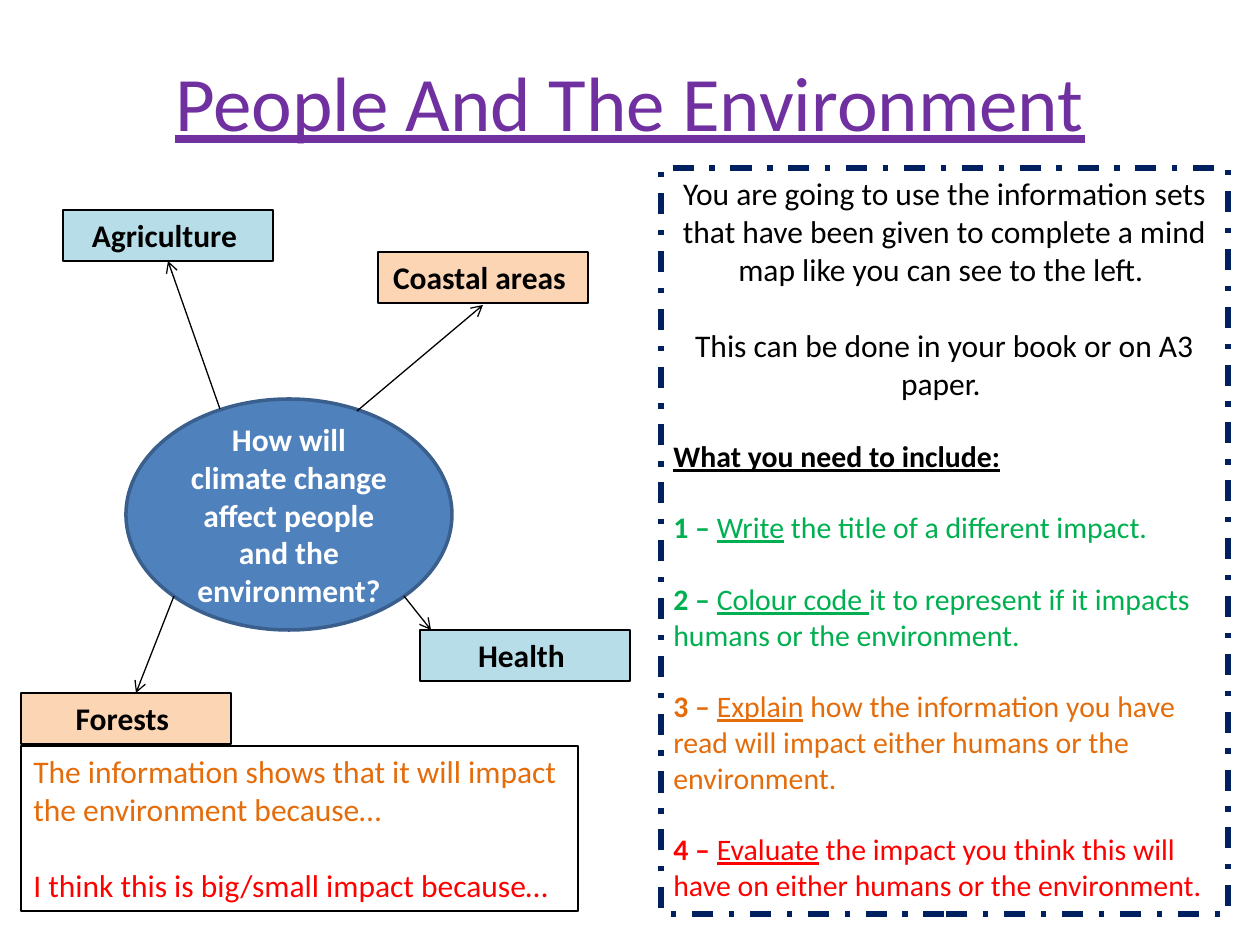
from lxml.etree import SubElement
from pptx import Presentation
from pptx.dml.color import RGBColor
from pptx.enum.dml import MSO_LINE
from pptx.enum.shapes import MSO_CONNECTOR, MSO_SHAPE
from pptx.enum.text import MSO_ANCHOR, PP_ALIGN
from pptx.oxml.ns import qn
from pptx.util import Pt

PX = 914400 // 126
FONT = "Calibri"
BLACK = RGBColor(0x00, 0x00, 0x00)
WHITE = RGBColor(0xFF, 0xFF, 0xFF)
PURPLE = RGBColor(0x70, 0x30, 0xA0)
NAVY = RGBColor(0x00, 0x20, 0x60)
BLUE = RGBColor(0x4F, 0x81, 0xBD)
DARK_BLUE = RGBColor(0x3A, 0x5F, 0x8C)
PEACH = RGBColor(0xFC, 0xD5, 0xB5)
AQUA = RGBColor(0xB7, 0xDE, 0xE8)
GREEN = RGBColor(0x00, 0xB0, 0x50)
ORANGE = RGBColor(0xE4, 0x6C, 0x0A)
RED = RGBColor(0xFF, 0x00, 0x00)


def add_box(x, y, w, h, color=BLACK, width=0.75):
    """Add an outlined, wrapping text box and return it."""
    sp = s.shapes.add_textbox(x * PX, y * PX, w * PX, h * PX)
    sp.line.color.rgb = color
    sp.line.width = Pt(width)
    sp.text_frame.word_wrap = True
    return sp


def write(tf, text, size=18, color=BLACK, align=PP_ALIGN.LEFT, before=0):
    """Fill the empty first paragraph, or append one, and return it."""
    p = tf.paragraphs[0]
    if p.runs:
        p = tf.add_paragraph()
    p.add_run().text = text
    p.alignment = align
    p.space_before = Pt(before)
    p.font.name = FONT
    p.font.size = Pt(size)
    p.font.color.rgb = color
    return p


prs = Presentation()
prs.slide_width = 1260 * PX
prs.slide_height = 945 * PX
s = prs.slides.add_slide(prs.slide_layouts[5])

title = s.shapes.title
title.left, title.top, title.width, title.height = 63 * PX, 22 * PX, 1134 * PX, 157 * PX
p = write(title.text_frame, "People And The Environment", 44, PURPLE, PP_ALIGN.CENTER)
p.font.underline = True

# Central question
question = s.shapes.add_shape(MSO_SHAPE.OVAL, 126 * PX, 399 * PX, 326 * PX, 231 * PX)
question.shadow.inherit = False
question.fill.solid()
question.fill.fore_color.rgb = BLUE
question.line.color.rgb = DARK_BLUE
question.line.width = Pt(2)
tf = question.text_frame
tf.word_wrap = True
tf.vertical_anchor = MSO_ANCHOR.MIDDLE
p = write(tf, "How will climate change affect people and the environment?",
          color=WHITE, align=PP_ALIGN.CENTER)
p.font.bold = True

# Instructions
tf = add_box(661, 168, 567, 746, NAVY, 3)
tf.line.dash_style = MSO_LINE.DASH_DOT
tf = tf.text_frame
write(tf, "You are going to use the information sets that have been given to "
      "complete a mind map like you can see to the left. ", align=PP_ALIGN.CENTER)
write(tf, "This can be done in your book or on A3 paper. ",
      align=PP_ALIGN.CENTER, before=22)
p = write(tf, "What you need to include:", 17, before=20.5)
p.font.bold = True
p.font.underline = True

STEPS = [
    ("Write", " the title of a different impact.", GREEN),
    ("Colour code ", "it to represent if it impacts humans or the environment.", GREEN),
    ("Explain", " how the information you have read will impact either humans "
     "or the environment.", ORANGE),
    ("Evaluate", " the impact you think this will have on either humans or the "
     "environment.", RED),
]
for number, (verb, rest, color) in enumerate(STEPS, 1):
    p = write(tf, f"{number} – ", 17, color, before=20.5)
    p.runs[0].font.bold = True
    r = p.add_run()
    r.text = verb
    r.font.underline = True
    p.add_run().text = rest

# Topic labels
LABELS = [
    ("Forests ", 21, 693, PEACH),
    ("Coastal areas ", 378, 252, PEACH),
    ("Agriculture ", 63, 210, AQUA),
    ("Health ", 420, 630, AQUA),
]
for text, x, y, fill in LABELS:
    label = add_box(x, y, 210, 51)
    label.fill.solid()
    label.fill.fore_color.rgb = fill
    p = write(label.text_frame, text, align=PP_ALIGN.CENTER)
    p.font.bold = True

# Arrows from the question to the labels
ARROWS = [
    (220, 409, 168, 261),
    (357, 411, 483, 305),
    (174, 596, 136, 693),
    (404, 596, 431, 630),
]
for ends in ARROWS:
    arrow = s.shapes.add_connector(MSO_CONNECTOR.STRAIGHT, *(v * PX for v in ends))
    arrow.line.color.rgb = BLACK
    arrow.line.width = Pt(0.75)
    SubElement(arrow.line._get_or_add_ln(), qn("a:tailEnd"), type="arrow")
    SubElement(arrow._element.spPr, qn("a:effectLst"))

# Sentence starters
tf = add_box(21, 746, 557, 165).text_frame
write(tf, "The information shows that it will impact the environment because…", color=ORANGE)
write(tf, "I think this is big/small impact because…", color=RED, before=22)

prs.save("out.pptx")
